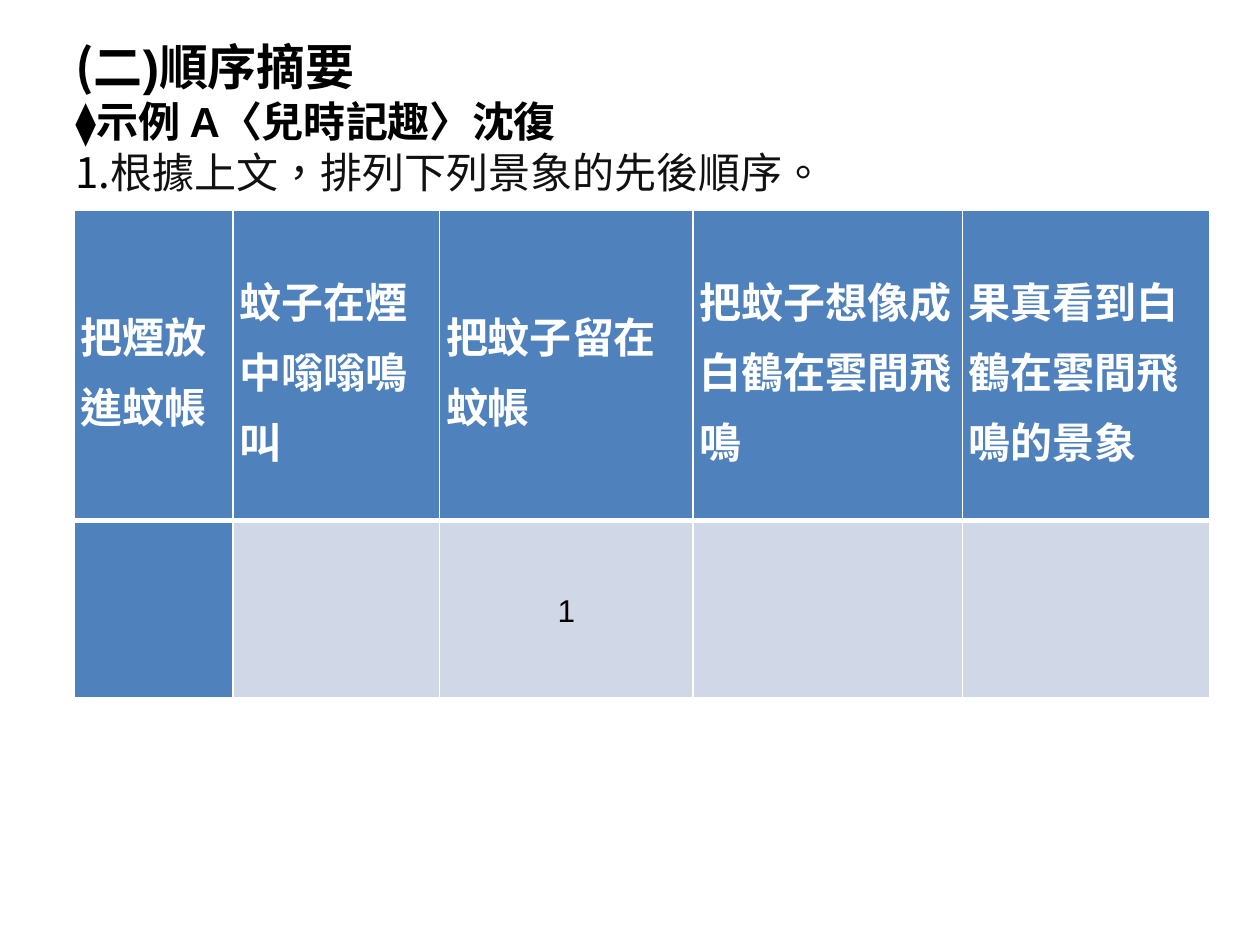
from lxml.etree import SubElement
from pptx import Presentation
from pptx.dml.color import RGBColor
from pptx.enum.text import MSO_ANCHOR as ANCHOR, PP_ALIGN as ALIGN
from pptx.oxml.ns import qn
from pptx.util import Inches, Pt

NOTO, ARIAL, TIMES = "Noto Sans CJK SC", "Arial", "Times New Roman"
BLACK, WHITE, BLUE, PALE = "000000", "FFFFFF", "4F81BD", "D0D8E8"
HEADING = [
    [("(", 28, NOTO, BLACK, True), ("二)順序摘要", 28, ARIAL, BLACK, True)],
    [("⧫", 24, ARIAL, BLACK, False), ("示例 A〈兒時記趣〉沈復", 24, ARIAL, BLACK, True)],
    [("1.", 24, NOTO, BLACK, False),
     ("根據上文，排列下列景象的先後順序。", 24, ARIAL, "111111", False)],
]
SCENES = ["把煙放進蚊帳", "蚊子在煙中嗡嗡鳴叫", "把蚊子留在蚊帳",
          "把蚊子想像成白鶴在雲間飛鳴", "果真看到白鶴在雲間飛鳴的景象"]
ANSWERS = ["", "", "1", "", ""]
COL_WIDTHS = [1.26, 1.64, 2.01, 2.14, 1.96]
ROW_HEIGHTS = [2.46, 1.41]


def color(value):
    """Turn a hex string into a colour."""
    return RGBColor.from_string(value)


def add_run(p, text, size, font, fill, bold):
    """Add one formatted run to a paragraph."""
    r = p.add_run()
    r.text = text
    r._r.get_or_add_rPr().set("lang", "zh-TW")
    for name, value in {"size": Pt(size), "name": font, "bold": bold}.items():
        setattr(r.font, name, value)
    r.font.color.rgb = color(fill)


def add_heading(s, left, top, width, height):
    """Place the three heading lines in one text box."""
    tf = s.shapes.add_textbox(left, top, width, height).text_frame
    tf.word_wrap = True
    tf.vertical_anchor = ANCHOR.MIDDLE
    p = tf.paragraphs[0]
    p.space_before = Pt(12)
    for i, line in enumerate(HEADING):
        if i:
            p.add_line_break()
        for part in line:
            add_run(p, *part)


def set_borders(cell, widths):
    """Draw white cell borders with widths given in points by side."""
    tc_pr = cell._tc.get_or_add_tcPr()
    for side, width in widths.items():
        ln = SubElement(tc_pr, qn(f"a:ln{side}"), w=str(Pt(width)))
        SubElement(SubElement(ln, qn("a:solidFill")), qn("a:srgbClr"), val=WHITE)


def fill_cell(cell, text, is_header, is_first):
    """Format one table cell and write its text."""
    middle = 3 if is_header else 1
    set_borders(cell, {"L": 1, "R": 1, "T": 1 if is_header else 3, "B": middle})
    cell.fill.solid()
    cell.fill.fore_color.rgb = color(BLUE if is_header or is_first else PALE)
    cell.vertical_anchor = ANCHOR.MIDDLE
    for side in ("left", "right", "top", "bottom"):
        setattr(cell, f"margin_{side}", Inches(0.05))
    p = cell.text_frame.paragraphs[0]
    p.line_spacing = 1.15
    p.alignment = ALIGN.LEFT if is_header else ALIGN.CENTER
    if text:
        style = (24, TIMES, WHITE, True) if is_header else (18, ARIAL, BLACK, False)
        add_run(p, text, *style)


def add_order_table(s, left, top, width, height):
    """Place the table of scenes to be put in order."""
    rows = [SCENES, ANSWERS]
    table = s.shapes.add_table(len(rows), len(SCENES), left, top, width, height).table
    table.first_col = True
    for col, col_width in zip(table.columns, COL_WIDTHS):
        col.width = Inches(col_width)
    for i, (row, row_height) in enumerate(zip(table.rows, ROW_HEIGHTS)):
        row.height = Inches(row_height)
        for j, text in enumerate(rows[i]):
            fill_cell(table.cell(i, j), text, i == 0, j == 0)


def main():
    """Build and save the slide."""
    prs = Presentation()
    prs.slide_width, prs.slide_height = Inches(10), Inches(7.5)
    s = prs.slides.add_slide(prs.slide_layouts[6])
    add_heading(s, Inches(0.5), Inches(0.3), Inches(9), Inches(1.25))
    add_order_table(s, Inches(0.59), Inches(1.67),
                    Inches(sum(COL_WIDTHS)), Inches(sum(ROW_HEIGHTS)))
    prs.save("out.pptx")


if __name__ == "__main__":
    main()
